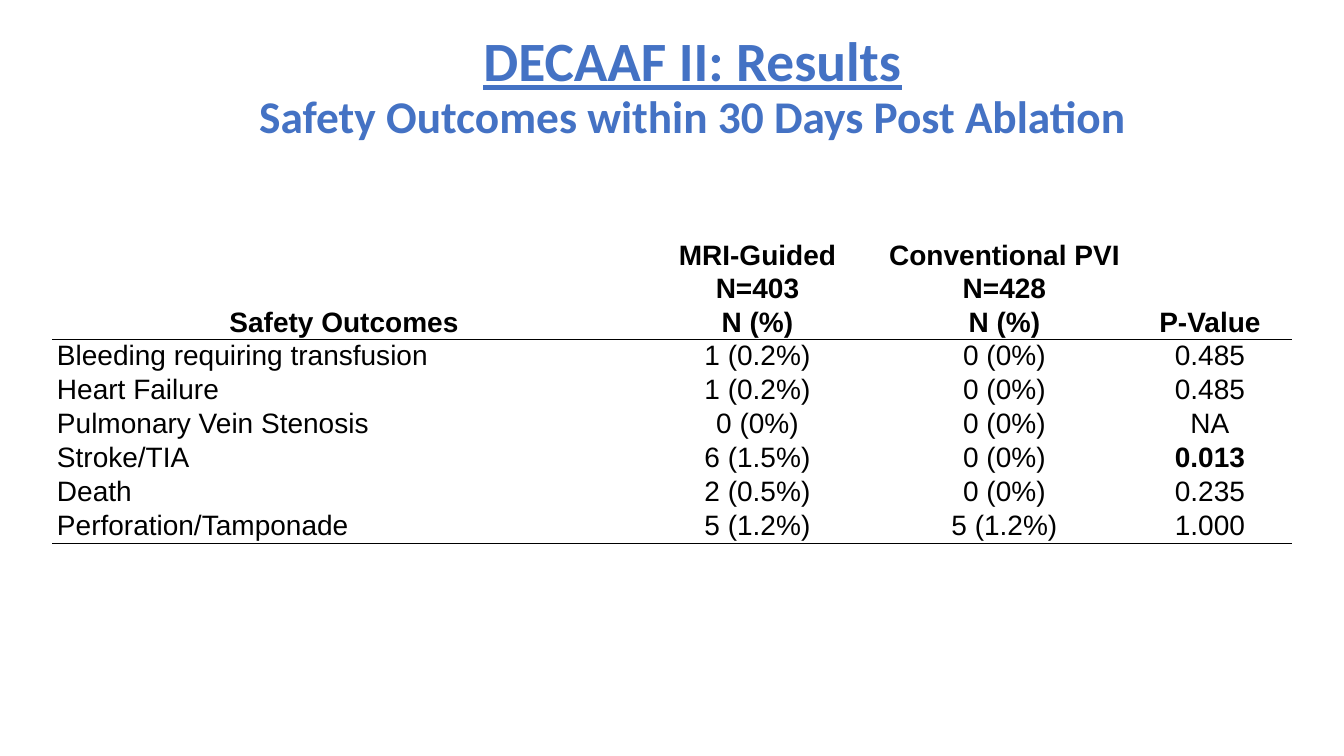
from dataclasses import dataclass

from lxml import etree
from pptx import Presentation
from pptx import util as u
from pptx.dml.color import RGBColor
from pptx.enum import text
from pptx.oxml import ns

EMU_PER_PX = u.Inches(1) / 100.8


@dataclass(frozen=True)
class Theme:
    title_color: RGBColor = RGBColor(0x44, 0x72, 0xC4)
    ink: RGBColor = RGBColor(0, 0, 0)
    paper: RGBColor = RGBColor(0xFF, 0xFF, 0xFF)
    title_font: str = "Calibri"
    table_font: str = "Arial"
    title_size: float = 39.6
    subtitle_size: float = 32.4
    table_size: float = 20
    rule_width: float = 1


@dataclass(frozen=True)
class Row:
    values: tuple[str, str, str, str]
    height: int = 34
    anchor: text.MSO_ANCHOR = text.MSO_ANCHOR.TOP
    header: bool = False
    bold_p_value: bool = False
    rules: tuple[str, ...] = ()


THEME = Theme()
COLUMN_WIDTHS = (582, 245, 249, 162)
MIDDLE = text.MSO_ANCHOR.MIDDLE
ROWS = (
    Row(("", "MRI-Guided", "Conventional PVI", ""), anchor=text.MSO_ANCHOR.BOTTOM, header=True),
    Row(("", "N=403", "N=428", ""), height=35, anchor=MIDDLE, header=True),
    Row(("Safety Outcomes", "N (%)", "N (%)", "P-Value"), anchor=MIDDLE, header=True,
        rules=("lnB",)),
    Row(("Bleeding requiring transfusion", "1 (0.2%)", "0 (0%)", "0.485"), rules=("lnT",)),
    Row(("Heart Failure", "1 (0.2%)", "0 (0%)", "0.485")),
    Row(("Pulmonary Vein Stenosis", "0 (0%)", "0 (0%)", "NA")),
    Row(("Stroke/TIA", "6 (1.5%)", "0 (0%)", "0.013"), bold_p_value=True),
    Row(("Death", "2 (0.5%)", "0 (0%)", "0.235")),
    Row(("Perforation/Tamponade", "5 (1.2%)", "5 (1.2%)", "1.000"), rules=("lnB",)),
)


def px(length: int) -> u.Emu:
    return u.Emu(round(length * EMU_PER_PX))


def add_rule(cell, side: str) -> None:
    """Draw one cell border; side is lnT or lnB."""
    properties = cell._tc.get_or_add_tcPr()
    line = etree.SubElement(properties, ns.qn(f"a:{side}"), w=str(u.Pt(THEME.rule_width)))
    fill = etree.SubElement(line, ns.qn("a:solidFill"))
    etree.SubElement(fill, ns.qn("a:srgbClr"), val=str(THEME.ink))


def fill_cell(cell, row: Row, column: int) -> None:
    for side in row.rules:
        add_rule(cell, side)
    cell.fill.solid()
    cell.fill.fore_color.rgb = THEME.paper
    cell.margin_left = cell.margin_right = px(4)
    cell.margin_top = cell.margin_bottom = 0
    cell.vertical_anchor = row.anchor
    cell.text = row.values[column]
    paragraph = cell.text_frame.paragraphs[0]
    centered = row.header or column > 0
    paragraph.alignment = text.PP_ALIGN.CENTER if centered else text.PP_ALIGN.LEFT
    font = paragraph.font
    font.name, font.size = THEME.table_font, u.Pt(THEME.table_size)
    font.bold = row.header or (row.bold_p_value and column == 3)
    font.color.rgb = THEME.ink


def write_title(title) -> None:
    title.left, title.top, title.width, title.height = map(px, (93, 52, 1199, 73))
    frame = title.text_frame
    frame.auto_size = text.MSO_AUTO_SIZE.NONE
    frame.vertical_anchor = MIDDLE
    paragraph = frame.paragraphs[0]
    paragraph.alignment = text.PP_ALIGN.CENTER
    paragraph.line_spacing = 0.9
    font = paragraph.font
    font.name, font.size, font.bold = THEME.title_font, u.Pt(THEME.title_size), True
    font.color.rgb = THEME.title_color
    heading = paragraph.add_run()
    heading.text = "DECAAF II: Results"
    heading.font.underline = True
    paragraph.add_line_break()
    subtitle = paragraph.add_run()
    subtitle.text = "Safety Outcomes within 30 Days Post Ablation"
    subtitle.font.size = u.Pt(THEME.subtitle_size)


def add_outcomes_table(slide) -> None:
    height = sum(row.height for row in ROWS)
    outcomes = slide.shapes.add_table(
        len(ROWS), len(COLUMN_WIDTHS), px(53), px(237), px(sum(COLUMN_WIDTHS)), px(height)
    ).table
    outcomes.first_row = outcomes.horz_banding = False
    for column, width in zip(outcomes.columns, COLUMN_WIDTHS):
        column.width = px(width)
    for table_row, row in zip(outcomes.rows, ROWS):
        table_row.height = px(row.height)
        for index, cell in enumerate(table_row.cells):
            fill_cell(cell, row, index)


def main() -> None:
    deck = Presentation()
    deck.slide_width, deck.slide_height = px(1344), px(756)
    slide = deck.slides.add_slide(deck.slide_layouts.get_by_name("Title Only"))
    write_title(slide.shapes.title)
    add_outcomes_table(slide)
    deck.save("out.pptx")


if __name__ == "__main__":
    main()
